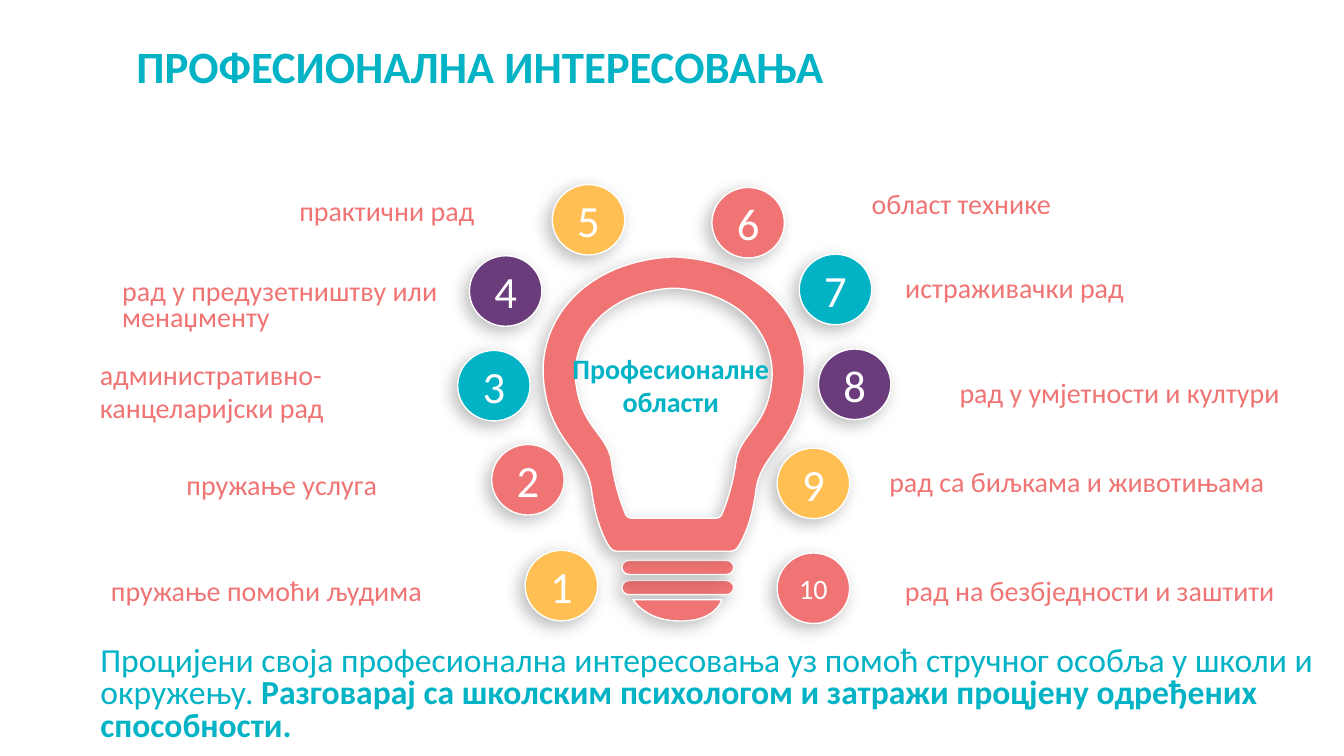
from lxml import etree
from pptx import Presentation
from pptx.dml.color import RGBColor
from pptx.enum import shapes, text
from pptx.oxml import ns
from pptx.util import Pt

TEAL, CORAL, GOLD, PLUM, WHITE = "02B3C5", "F07474", "FFBF53", "6A3C7C", "FFFFFF"
AXIS = 481.25  # vertical axis of the bulb

# number, left, top, colour, text size
DISCS = [
    ("1", 375.1, 393.1, GOLD, 31.9),
    ("2", 351.2, 317.5, CORAL, 31.9),
    ("3", 326.9, 250.3, TEAL, 31.9),
    ("4", 335.3, 182.7, PLUM, 31.9),
    ("5", 394.5, 131.8, GOLD, 31.9),
    ("6", 508.5, 133.9, CORAL, 31.9),
    ("7", 570.9, 181.6, TEAL, 31.9),
    ("8", 584.6, 249.3, PLUM, 31.9),
    ("9", 555.1, 320.1, GOLD, 31.9),
    ("10", 555.1, 395, CORAL, 20),
]

# wording, left, top, width, height, line spacing
LABELS = [
    ("пружање помоћи људима", 79.3, 414.4, 278.6, 19.4, 0.8),
    ("пружање услуга", 133.2, 338.8, 261.4, 19.4, 0.8),
    ("административно-\nканцеларијски рад", 71.3, 260.3, 172.1, 43.9, 0.8),
    ("рад у предузетништву или менаџменту", 87.3, 199.7, 244.8, 38.9, 0.8),
    ("практични рад", 213.8, 138.2, 154.1, 53.3, 1),
    ("област технике", 622.6, 138.2, 154.1, 19.4, 0.8),
    ("истраживачки рад", 646.6, 198, 268.6, 19.4, 0.8),
    ("рад у умјетности и култури", 685.4, 272.9, 229.7, 19.4, 0.8),
    ("рад са биљкама и животињама", 635.2, 336.2, 313.2, 19.4, 0.8),
    ("рад на безбједности и заштити", 646.4, 414.4, 302.4, 19.4, 0.8),
]

# left halves: start point, then curves of two handles and an end point
OUTER = [(478.8, 183.6),
         (419, 187.2), (385.2, 226.8), (388.1, 270),
         (391.7, 316.8), (419, 321.8), (422.6, 350.6),
         (426.2, 378.7), (435.6, 391), (435.6, 391),
         (437, 393.1), (439.2, 393.8), (440.6, 393.8)]
INNER = [(479.5, 205.9),
         (434.9, 208.8), (409, 238.3), (411.1, 270.7),
         (414, 306), (434.9, 309.6), (437, 331.2),
         (439.9, 352.1), (447.1, 367.9), (447.1, 367.9),
         (447.8, 369.4), (449.3, 370.1), (450.7, 370.1)]
BASE = [(452.2, 428.4),
        (452.2, 428.4), (515.5, 428.4), (515.5, 428.4),
        (515.5, 428.4), (511.2, 445), (483.1, 443.5),
        (460.8, 442.8), (452.2, 428.4), (452.2, 428.4)]


def color(code):
    return RGBColor.from_string(code)


def mirror(half):
    """Join a left half to its reflection in the bulb axis."""
    right = [(2 * AXIS - x, y) for x, y in reversed(half)]
    return half + [half[-1], right[0]] + right


def paint(shape, fill):
    shape.fill.solid()
    shape.fill.fore_color.rgb = color(fill)
    shape.line.color.rgb = color(WHITE)
    shape.line.width = Pt(1)
    shape.shadow.inherit = False
    glow = shape._element.spPr.find(ns.qn("a:effectLst"))
    outer = etree.SubElement(glow, ns.qn("a:outerShdw"), blurRad=str(Pt(12)),
                             dist=str(Pt(5)), dir="8100000", algn="tr", rotWithShape="0")
    black = etree.SubElement(outer, ns.qn("a:srgbClr"), val="000000")
    etree.SubElement(black, ns.qn("a:alpha"), val="26000")


def bend(shape):
    """Turn each three straight segments into one cubic curve."""
    lines = list(shape._element.iter(ns.qn("a:lnTo")))
    for i in range(0, len(lines), 3):
        curve = etree.Element(ns.qn("a:cubicBezTo"))
        lines[i].addprevious(curve)
        for line in lines[i:i + 3]:
            curve.append(line[0])
            line.getparent().remove(line)


def draw(slide, first, *holes):
    """Add one curved outline with its holes."""
    pen = slide.shapes.build_freeform(*map(Pt, first[0]))
    for ring in (first, *holes):
        if ring is not first:
            pen.move_to(*map(Pt, ring[0]))
        pen.add_line_segments([(Pt(x), Pt(y)) for x, y in ring[1:]], close=True)
    shape = pen.convert_to_shape()
    bend(shape)
    paint(shape, CORAL)


def place(shape, left, top, width, height):
    shape.left, shape.top = Pt(left), Pt(top)
    shape.width, shape.height = Pt(width), Pt(height)


def style(run, size, tint, bold=False):
    font = run.font
    font.name, font.size, font.bold = "Calibri", Pt(size), bold
    font.color.rgb = color(tint)


def inset(frame):
    frame.margin_left = frame.margin_right = 0
    frame.margin_top = frame.margin_bottom = 0


def add_text(slide, words, box, size, tint, bold=False, spacing=1, align=text.PP_ALIGN.LEFT):
    frame = slide.shapes.add_textbox(*map(Pt, box)).text_frame
    frame.word_wrap = True
    frame.text = words
    for i, para in enumerate(frame.paragraphs):
        para.alignment = align
        para.line_spacing = spacing
        if i:
            para.space_before = Pt(4)
        style(para.runs[0], size, tint, bold)
    return frame


def add_disc(slide, number, left, top, fill, size):
    disc = slide.shapes.add_shape(shapes.MSO_SHAPE.OVAL, *map(Pt, (left, top, 51.8, 50.4)))
    paint(disc, fill)
    frame = disc.text_frame
    inset(frame)
    frame.vertical_anchor = text.MSO_ANCHOR.MIDDLE
    frame.text = number
    frame.paragraphs[0].alignment = text.PP_ALIGN.CENTER
    style(frame.paragraphs[0].runs[0], size, WHITE)


def add_title(slide, words):
    title = slide.shapes.title
    place(title, 90.2, 24.2, 524.9, 46.1)
    frame = title.text_frame
    frame.text = words
    frame.auto_size = text.MSO_AUTO_SIZE.SHAPE_TO_FIT_TEXT
    frame.vertical_anchor = text.MSO_ANCHOR.TOP
    frame.paragraphs[0].alignment = text.PP_ALIGN.LEFT
    style(frame.paragraphs[0].runs[0], 32, TEAL, True)


def add_bulb(slide):
    for top in (414.7, 400.3):
        bar = slide.shapes.add_shape(shapes.MSO_SHAPE.ROUNDED_RECTANGLE,
                                     *map(Pt, (444.2, top, 79.9, 10.1)))
        bar.adjustments[0] = 0.5
        paint(bar, CORAL)
    draw(slide, BASE)
    draw(slide, mirror(OUTER), mirror(INNER))


def main():
    deck = Presentation()
    deck.slide_width, deck.slide_height = Pt(960), Pt(540)
    slide = deck.slides.add_slide(deck.slide_layouts[5])
    add_title(slide, "ПРОФЕСИОНАЛНА ИНТЕРЕСОВАЊА")
    add_bulb(slide)
    for disc in DISCS:
        add_disc(slide, *disc)
    for words, *box, spacing in LABELS:
        frame = add_text(slide, words, box, 20, CORAL, spacing=spacing)
        inset(frame)
        frame.auto_size = text.MSO_AUTO_SIZE.SHAPE_TO_FIT_TEXT
    inset(add_text(slide, "Професионалне области", (403.2, 250.9, 151.9, 101.5),
                   20, TEAL, True, align=text.PP_ALIGN.CENTER))
    advice = add_text(slide, "Процијени своја професионална интересовања уз помоћ "
                      "стручног особља у школи и окружењу. ",
                      (64.6, 458.4, 884.2, 75.6), 24, TEAL, spacing=0.8)
    call = advice.paragraphs[0].add_run()
    call.text = "Разговарај са школским психологом и затражи процјену одређених способности."
    style(call, 24, TEAL, True)
    deck.save("out.pptx")


if __name__ == "__main__":
    main()
